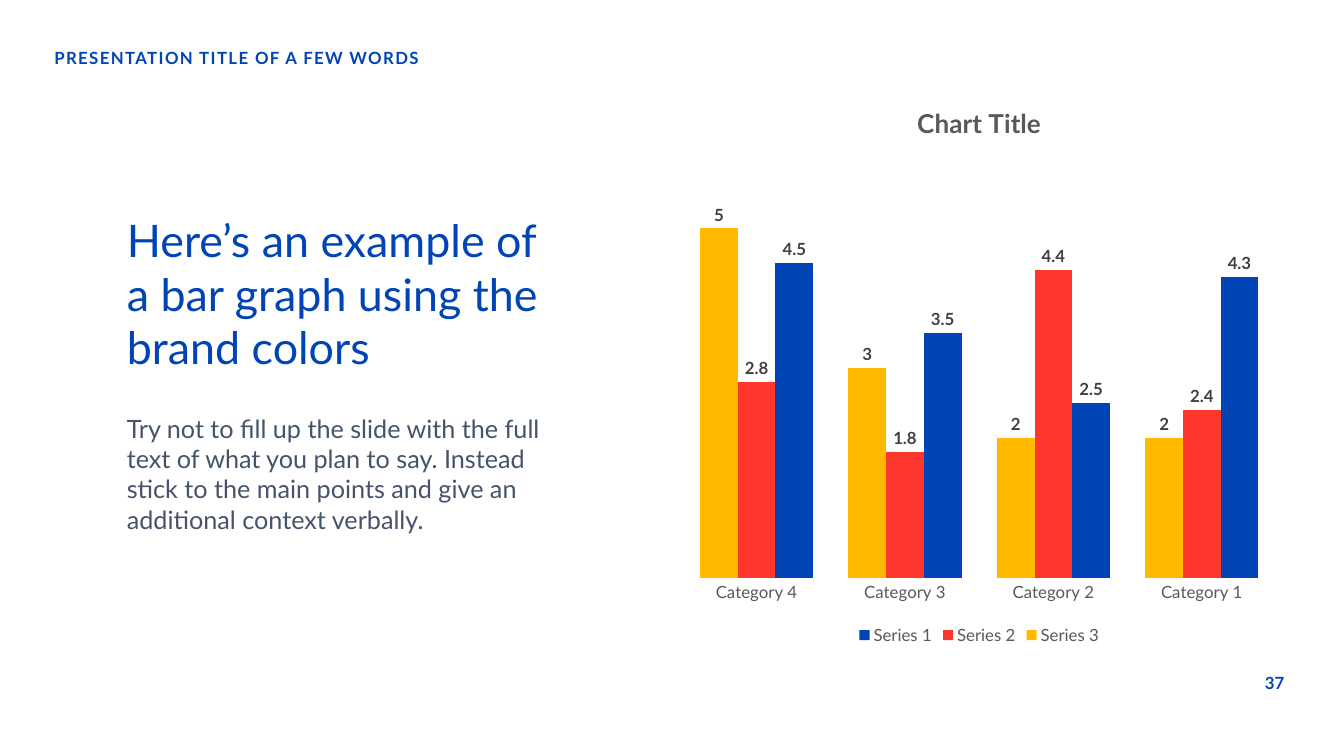
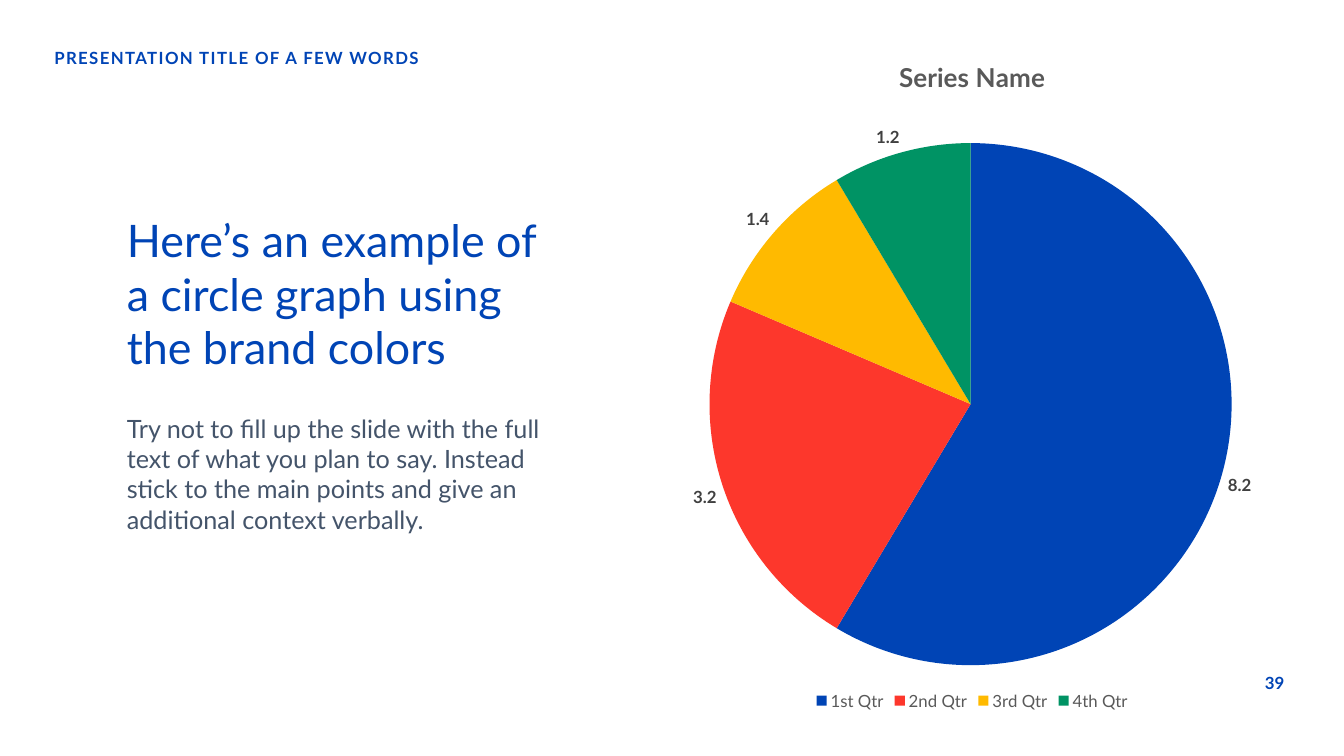
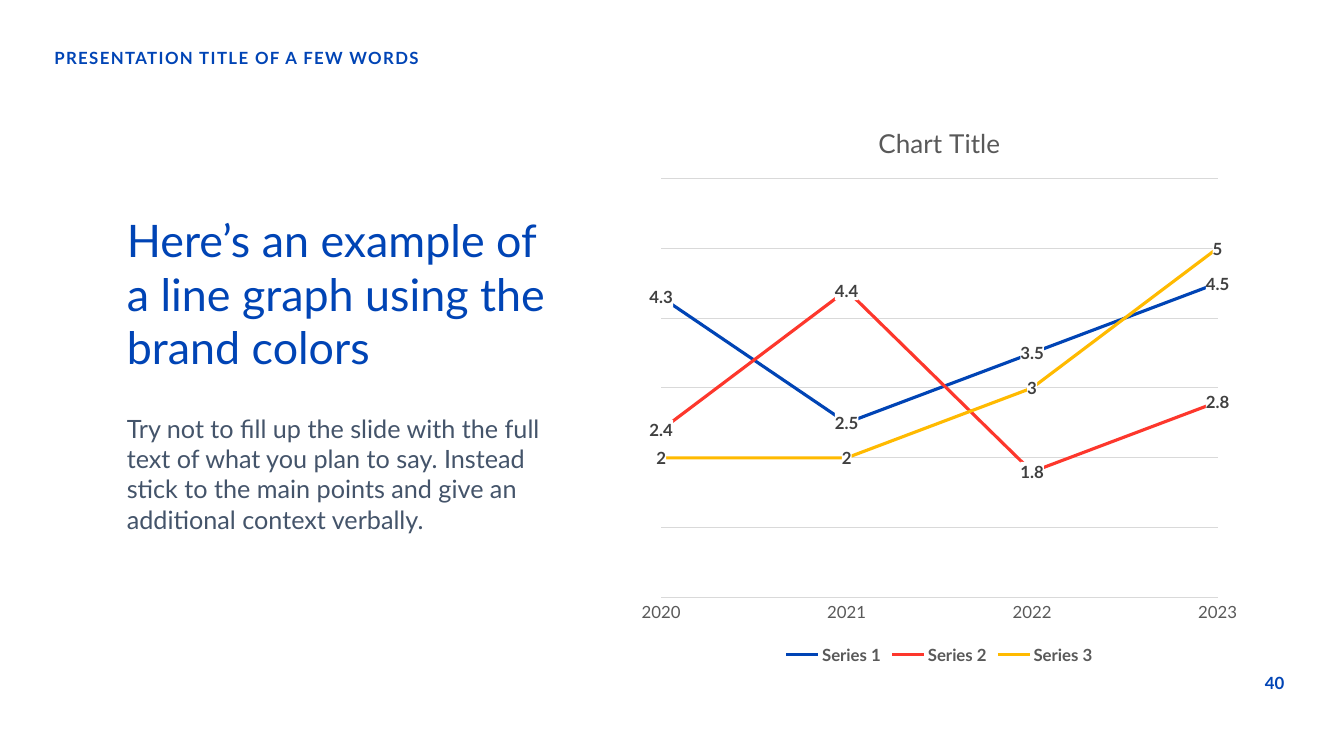
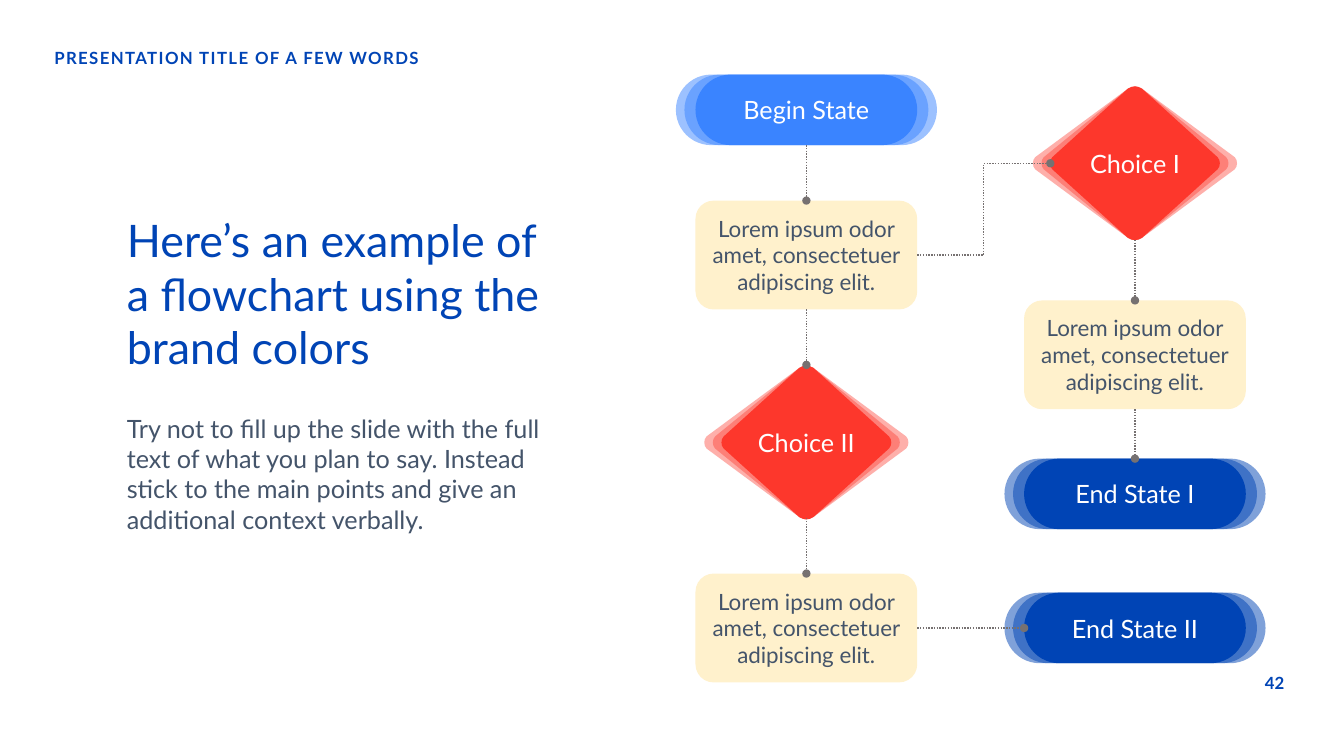
from lxml import etree
from pptx import Presentation
from pptx import util as u
from pptx.chart.data import CategoryChartData
from pptx.dml.color import RGBColor
from pptx.enum import chart as charts, dml, shapes, text
from pptx.oxml import parse_xml
from pptx.oxml.ns import nsdecls, qn

PX = 9144
FONT = "Lato"
BLUE = RGBColor(0x00, 0x44, 0xB5)
SKY = RGBColor(0x3A, 0x84, 0xFF)
RED = RGBColor(0xFD, 0x37, 0x2C)
YELLOW = RGBColor(0xFF, 0xBA, 0x00)
GREEN = RGBColor(0x00, 0x93, 0x64)
CREAM = RGBColor(0xFF, 0xF1, 0xCC)
SLATE = RGBColor(0x44, 0x54, 0x6A)
WHITE = RGBColor(0xFF, 0xFF, 0xFF)
LINK_GRAY = RGBColor(0x76, 0x71, 0x71)
LABEL_GRAY = RGBColor(0x40, 0x40, 0x40)
CHART_GRAY = RGBColor(0x59, 0x59, 0x59)
GRID_GRAY = RGBColor(0xD9, 0xD9, 0xD9)

HEADER = "PRESENTATION TITLE OF A FEW WORDS"
BODY = ("Try not to fill up the slide with the full text of what you plan to say. "
        "Instead stick to the main points and give an additional context verbally.")
LOREM = "Lorem ipsum odor amet, consectetuer adipiscing elit."
SERIES = {
    "Series 1": (4.3, 2.5, 3.5, 4.5),
    "Series 2": (2.4, 4.4, 1.8, 2.8),
    "Series 3": (2, 2, 3, 5),
}
PALETTE = (BLUE, RED, YELLOW, GREEN)
PILL_WIDTHS = (259, 242, 220)
DIAMOND_WIDTHS = (202, 185, 168)
TOP, LEFT, BOTTOM, RIGHT = range(4)


def px(*lengths):
    return [u.Emu(round(length * PX)) for length in lengths]


def style_font(font, size, color, bold=False):
    font.name = FONT
    font.size = u.Pt(size)
    font.bold = bold
    font.color.rgb = color


def write(frame, content, size=18, color=SLATE, bold=False, align=None,
          line_spacing=None, tracking=None):
    paragraph = frame.paragraphs[0]
    run = paragraph.add_run()
    run.text = content
    style_font(run.font, size, color, bold)
    if align is not None:
        paragraph.alignment = align
    if line_spacing:
        paragraph.line_spacing = line_spacing
    if tracking:
        run.font._element.set("spc", str(tracking * 100))


def add_text(slide, box, content, **format_options):
    frame = slide.shapes.add_textbox(*px(*box)).text_frame
    frame.word_wrap = True
    write(frame, content, **format_options)


def add_base_slide(presentation, title, number):
    slide = presentation.slides.add_slide(presentation.slide_layouts[6])
    add_text(slide, (44, 45, 549, 29), HEADER, size=12, color=BLUE, bold=True,
             line_spacing=0.9, tracking=1)
    add_text(slide, (1242, 662, 42, 30), str(number), size=12, color=BLUE, bold=True,
             align=text.PP_ALIGN.RIGHT)
    add_text(slide, (116, 206, 438, 172), title, size=32, color=BLUE)
    add_text(slide, (116, 405, 438, 131), BODY)
    return slide


def place_plot(chart, box, plot_box):
    left, top, width, height = box
    plot_left, plot_top, plot_width, plot_height = plot_box
    fractions = {
        "x": (plot_left - left) / width,
        "y": (plot_top - top) / height,
        "w": plot_width / width,
        "h": plot_height / height,
    }
    plot_area = chart.element.find(".//" + qn("c:plotArea"))
    for old_layout in plot_area.findall(qn("c:layout")):
        plot_area.remove(old_layout)
    layout = etree.Element(qn("c:layout"))
    manual = etree.SubElement(layout, qn("c:manualLayout"))
    settings = [("layoutTarget", "inner"), ("xMode", "edge"), ("yMode", "edge")]
    settings += [(name, f"{value:.4f}") for name, value in fractions.items()]
    for name, value in settings:
        etree.SubElement(manual, qn("c:" + name)).set("val", value)
    plot_area.insert(0, layout)


def label_series(series, position):
    labels = series.data_labels
    labels.show_value = True
    labels.position = position
    style_font(labels.font, 12, LABEL_GRAY, True)
    return labels


def add_chart(slide, kind, box, plot_box, categories, values, title,
              title_bold=True, legend_bold=False):
    data = CategoryChartData()
    data.categories = categories
    for name, numbers in values.items():
        data.add_series(name, numbers)
    chart = slide.shapes.add_chart(kind, *px(*box), data).chart
    style_font(chart.font, 12, CHART_GRAY)
    chart.has_title = True
    write(chart.chart_title.text_frame, title, size=18.6, color=CHART_GRAY,
          bold=title_bold)
    chart.chart_title.include_in_layout = False
    chart.has_legend = True
    chart.legend.position = charts.XL_LEGEND_POSITION.BOTTOM
    chart.legend.include_in_layout = False
    style_font(chart.legend.font, 12, CHART_GRAY, legend_bold)
    chart.plots[0].vary_by_categories = kind == charts.XL_CHART_TYPE.PIE
    place_plot(chart, box, plot_box)
    return chart


def style_axes(chart, has_gridlines):
    value_axis, category_axis = chart.value_axis, chart.category_axis
    value_axis.minimum_scale = 0
    value_axis.maximum_scale = 6
    value_axis.major_unit = 1
    value_axis.has_major_gridlines = has_gridlines
    value_axis.visible = False
    category_axis.major_tick_mark = charts.XL_TICK_MARK.NONE
    style_font(category_axis.tick_labels.font, 12, CHART_GRAY)
    if not has_gridlines:
        category_axis.format.line.fill.background()
        return
    for line in (value_axis.major_gridlines.format.line, category_axis.format.line):
        line.color.rgb = GRID_GRAY
        line.width = u.Pt(0.75)


def add_bar_chart(slide):
    chart = add_chart(slide, charts.XL_CHART_TYPE.COLUMN_CLUSTERED,
                      (665, 82, 613, 562), (677, 157, 589, 416),
                      [f"Category {number}" for number in range(1, 5)],
                      SERIES, "Chart Title")
    style_axes(chart, False)
    chart.category_axis.reverse_order = True
    plot = chart.plots[0]
    plot.gap_width = 94
    plot.overlap = 0
    for series, color in zip(plot.series, PALETTE):
        series.format.fill.solid()
        series.format.fill.fore_color.rgb = color
        label_series(series, charts.XL_LABEL_POSITION.OUTSIDE_END)


def add_pie_chart(slide):
    chart = add_chart(slide, charts.XL_CHART_TYPE.PIE,
                      (631, 34, 667, 675), (704, 142, 518, 518),
                      ["1st Qtr", "2nd Qtr", "3rd Qtr", "4th Qtr"],
                      {"Series Name": (8.2, 3.2, 1.4, 1.2)}, "Series Name")
    series = chart.plots[0].series[0]
    for index, color in enumerate(PALETTE):
        fill = series.points[index].format.fill
        fill.solid()
        fill.fore_color.rgb = color
    label_series(series, charts.XL_LABEL_POSITION.OUTSIDE_END)


def add_line_chart(slide):
    chart = add_chart(slide, charts.XL_CHART_TYPE.LINE,
                      (624, 102, 616, 561), (656, 177, 552, 416),
                      [str(year) for year in range(2020, 2024)], SERIES, "Chart Title",
                      title_bold=False, legend_bold=True)
    style_axes(chart, True)
    axis = chart.value_axis._element
    for crossing in axis.findall(qn("c:crossBetween")):
        axis.remove(crossing)
    axis.xpath("c:crosses|c:crossAx")[-1].addnext(
        parse_xml(f'<c:crossBetween {nsdecls("c")} val="midCat"/>'))
    for series, color in zip(chart.plots[0].series, PALETTE):
        series.smooth = False
        series.marker.style = charts.XL_MARKER_STYLE.NONE
        series.format.line.color.rgb = color
        series.format.line.width = u.Pt(2.25)
        labels = label_series(series, charts.XL_LABEL_POSITION.CENTER)
        labels._element.find(qn("c:txPr")).addprevious(parse_xml(
            f'<c:spPr {nsdecls("c", "a")}><a:solidFill><a:srgbClr val="{WHITE}"/>'
            '</a:solidFill></c:spPr>'))


def paint(shape, color, opacity=100):
    shape.shadow.inherit = False
    shape.line.fill.background()
    shape.fill.solid()
    shape.fill.fore_color.rgb = color
    if opacity < 100:
        color_element = shape.element.spPr.find(".//" + qn("a:srgbClr"))
        etree.SubElement(color_element, qn("a:alpha")).set("val", str(opacity * 1000))


def caption(shape, content, size, color):
    shape.text_frame.word_wrap = True
    shape.text_frame.vertical_anchor = text.MSO_ANCHOR.MIDDLE
    write(shape.text_frame, content, size=size, color=color, align=text.PP_ALIGN.CENTER)


def rounded_box(slide, center, top, width, height):
    return slide.shapes.add_shape(shapes.MSO_SHAPE.ROUNDED_RECTANGLE,
                                  *px(center - width / 2, top, width, height))


def add_step(slide, center, top):
    step = rounded_box(slide, center, top, 220, 108)
    paint(step, CREAM)
    caption(step, LOREM, 16, SLATE)
    return step


def pill(slide, center, top, width):
    shape = rounded_box(slide, center, top, width, 70)
    shape.adjustments[0] = 0.5
    return shape


def round_corners(shape):
    segments = shape.element.spPr.findall(".//" + qn("a:lnTo"))
    for index in range(0, len(segments), 4):
        corner = segments[index:index + 3]
        curve = etree.Element(qn("a:cubicBezTo"))
        corner[0].addprevious(curve)
        for segment in corner:
            curve.append(segment[0])
            segment.getparent().remove(segment)


def diamond(slide, center, middle, width):
    half = width / 2
    upper = [(-7, -74), (-2, -77), (2, -77), (7, -74)]
    right = [(half - 2, -6), (half + 1, -3), (half + 1, 3), (half - 2, 6)]
    half_outline = upper + right
    outline = half_outline + [(-x, -y) for x, y in half_outline]
    points = [px(center + x, middle + y) for x, y in outline]
    builder = slide.shapes.build_freeform(*points[0])
    builder.add_line_segments(points[1:], close=True)
    shape = builder.convert_to_shape()
    round_corners(shape)
    return shape


def add_layers(slide, draw, center, position, widths, color, opacity, content):
    for width in widths[:-1]:
        paint(draw(slide, center, position, width), color, opacity)
    front = draw(slide, center, position, widths[-1])
    paint(front, color)
    caption(front, content, 18, WHITE)
    return front


def add_state(slide, center, top, color, content):
    return add_layers(slide, pill, center, top, PILL_WIDTHS, color, 50, content)


def add_choice(slide, center, middle, content):
    return add_layers(slide, diamond, center, middle, DIAMOND_WIDTHS, RED, 40, content)


def add_link(slide, begin, end, kind=shapes.MSO_CONNECTOR.STRAIGHT,
             begin_joint=None, end_joint=None):
    link = slide.shapes.add_connector(kind, *px(*begin, *end))
    if begin_joint:
        link.begin_connect(*begin_joint)
    if end_joint:
        link.end_connect(*end_joint)
    link.line.color.rgb = LINK_GRAY
    link.line.width = u.Pt(1)
    link.line.dash_style = dml.MSO_LINE.ROUND_DOT
    line = link.line._get_or_add_ln()
    etree.SubElement(line, qn("a:tailEnd")).set("type", "oval")
    etree.SubElement(link._element.spPr, qn("a:effectLst"))


def add_flowchart(slide):
    left, right = 800, 1126
    begin_state = add_state(slide, left, 74, SKY, "Begin State")
    first_step = add_step(slide, left, 199)
    add_choice(slide, left, 439, "Choice II")
    last_step = add_step(slide, left, 569)
    add_choice(slide, right, 162, "Choice I")
    right_step = add_step(slide, right, 298)
    first_end = add_state(slide, right, 455, BLUE, "End State I")
    second_end = add_state(slide, right, 588, BLUE, "End State II")

    add_link(slide, (left, 144), (left, 199),
             begin_joint=(begin_state, BOTTOM), end_joint=(first_step, TOP))
    add_link(slide, (left, 307), (left, 362), begin_joint=(first_step, BOTTOM))
    add_link(slide, (left, 514), (left, 569), end_joint=(last_step, TOP))
    add_link(slide, (910, 253), (1042, 162), kind=shapes.MSO_CONNECTOR.ELBOW)
    add_link(slide, (right, 238), (right, 298), end_joint=(right_step, TOP))
    add_link(slide, (right, 406), (right, 455),
             begin_joint=(right_step, BOTTOM), end_joint=(first_end, TOP))
    add_link(slide, (910, 623), (1016, 623),
             begin_joint=(last_step, RIGHT), end_joint=(second_end, LEFT))


def main():
    presentation = Presentation()
    presentation.slide_width = u.Emu(12192000)
    presentation.slide_height = u.Inches(7.5)
    for topic, number, add_content in (
        ("bar graph", 37, add_bar_chart),
        ("circle graph", 39, add_pie_chart),
        ("line graph", 40, add_line_chart),
        ("flowchart", 42, add_flowchart),
    ):
        title = f"Here’s an example of a {topic} using the brand colors"
        add_content(add_base_slide(presentation, title, number))
    presentation.save("out.pptx")


if __name__ == "__main__":
    main()
